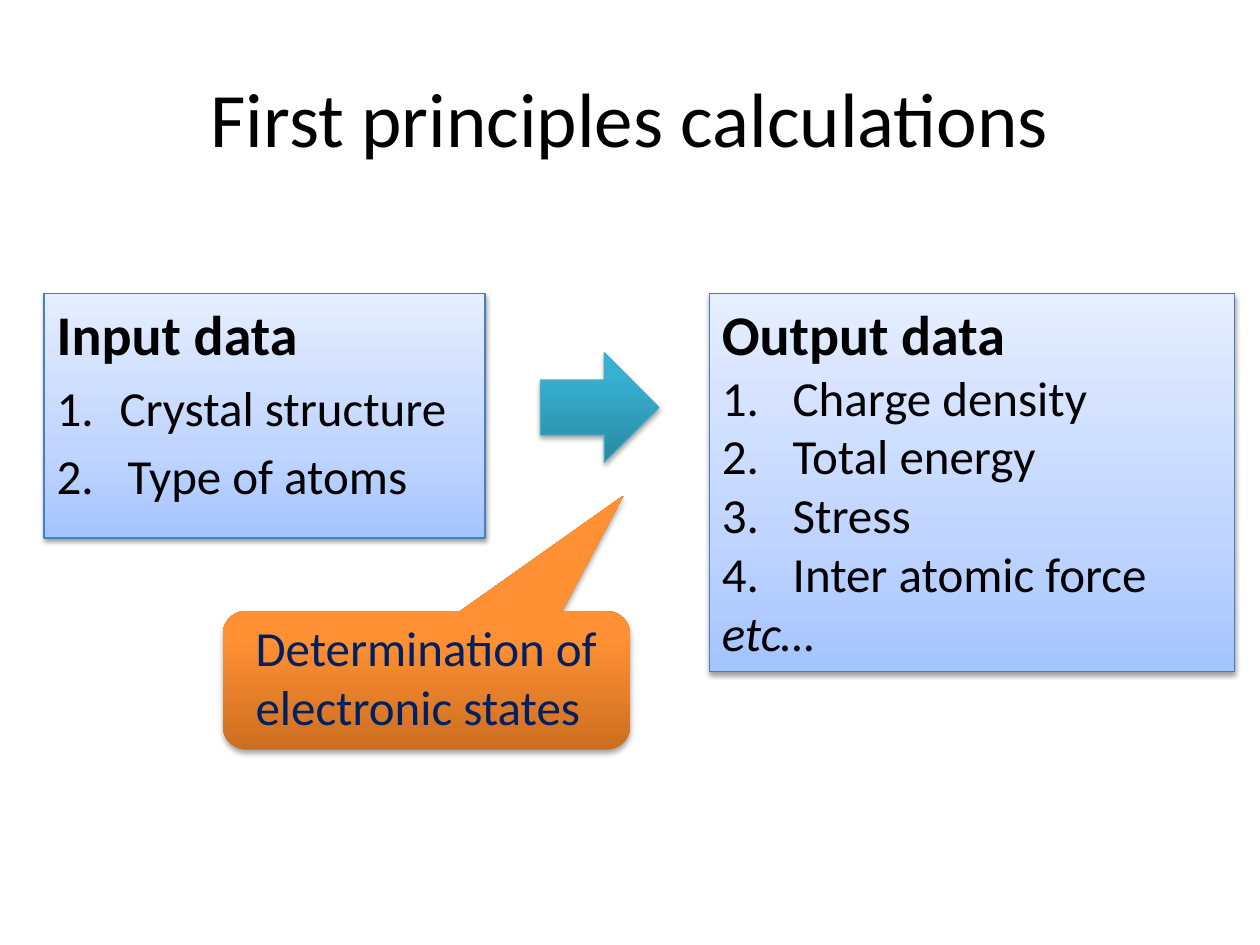
import dataclasses

import lxml.etree
import pptx
import pptx.dml.color
import pptx.enum.shapes
import pptx.enum.text
import pptx.oxml.ns
import pptx.util

Pt = pptx.util.Pt
qn = pptx.oxml.ns.qn
Shape = pptx.enum.shapes.MSO_SHAPE
AutoSize = pptx.enum.text.MSO_AUTO_SIZE


@dataclasses.dataclass(frozen=True)
class Theme:
    font: str = "Calibri"
    title_size: int = 44
    heading_size: int = 32
    text_size: int = 28
    ink: str = "000000"
    navy: str = "002060"
    panel_line: str = "4B7EBC"
    arrow_line: str = "46AAC5"
    panel: tuple = ((0, "A4C4FF"), (35, "BFD4FF"), (100, "E6EEFF"))
    callout: tuple = ((0, "CC6E20"), (80, "FF9034"), (100, "FF9136"))
    arrow: tuple = ((0, "2A88A2"), (80, "37B1D2"), (100, "34B4D6"))
    panel_shadow: tuple = (38, 1.6)
    solid_shadow: tuple = (35, 1.8)


THEME = Theme()


def rgb(color):
    return pptx.dml.color.RGBColor.from_string(color)


def add_node(parent, tag, **attributes):
    values = {name: str(value) for name, value in attributes.items()}
    return lxml.etree.SubElement(parent, qn(tag), values)


def place(shape, left, top, width, height):
    frame = {"left": left, "top": top, "width": width, "height": height}
    for name, value in frame.items():
        setattr(shape, name, Pt(value))


def style_gradient(shape, stops):
    shape.fill.gradient()
    shape.fill.gradient_angle = 90
    stop_list = shape._element.spPr.find(".//" + qn("a:gsLst"))
    stop_list.clear()
    for position, color in stops:
        stop = add_node(stop_list, "a:gs", pos=position * 1000)
        add_node(stop, "a:srgbClr", val=color)


def style_shadow(shape, opacity, distance):
    shape.shadow.inherit = False
    effects = shape._element.spPr.find(qn("a:effectLst"))
    shadow = add_node(effects, "a:outerShdw", blurRad=Pt(3.1), dist=Pt(distance),
                      dir=90 * 60000, rotWithShape=0)
    color = add_node(shadow, "a:srgbClr", val=THEME.ink)
    add_node(color, "a:alpha", val=opacity * 1000)


def style_surface(shape, stops, shadow, line=None):
    style_gradient(shape, stops)
    if line:
        shape.line.color.rgb = rgb(line)
        shape.line.width = Pt(0.75)
    else:
        shape.line.fill.background()
    style_shadow(shape, *shadow)


def write(para, text, size, color=THEME.ink, **formats):
    span = para.add_run()
    span.text = text
    span.font.color.rgb = rgb(color)
    formats = {"name": THEME.font, "size": Pt(size), **formats}
    for name, value in formats.items():
        setattr(span.font, name, value)


def set_marker(para, indent=0):
    properties = para._p.get_or_add_pPr()
    properties.set("marL", str(Pt(indent)))
    properties.set("indent", str(-Pt(indent)))
    if indent:
        add_node(properties, "a:buFont", typeface="+mj-lt")
        add_node(properties, "a:buAutoNum", type="arabicPeriod")
    else:
        add_node(properties, "a:buNone")


def fill_panel(box, heading, items):
    style_surface(box, THEME.panel, THEME.panel_shadow, THEME.panel_line)
    frame = box.text_frame
    frame.word_wrap = True
    para = frame.paragraphs[0]
    set_marker(para)
    write(para, heading, THEME.heading_size, bold=True)
    for text, indent in items:
        para = frame.add_paragraph()
        set_marker(para, indent)
        write(para, text, THEME.text_size)
    return frame


def add_title(page, text):
    title = page.shapes.title
    place(title, 36, 21.6, 648, 90)
    write(title.text_frame.paragraphs[0], text, THEME.title_size)


def add_input(page):
    body = page.placeholders[1]
    place(body, 25.2, 167.8, 252, 139.7)
    frame = fill_panel(body, "Input data",
                       [("Crystal structure", 36), ("Type of atoms", 40.5)])
    frame.auto_size = AutoSize.NONE


def add_callout(page, text):
    group = page.shapes.add_group_shape()
    bubble = group.shapes.add_shape(Shape.ROUNDED_RECTANGULAR_CALLOUT,
                                    Pt(127.4), Pt(349.2), Pt(232.6), Pt(79.2))
    for index, value in enumerate((0.484, -1.333, 0.167)):
        bubble.adjustments[index] = value
    style_surface(bubble, THEME.callout, THEME.solid_shadow)
    label = group.shapes.add_textbox(Pt(139), Pt(349.2), Pt(226.8), Pt(74.9))
    label.text_frame.word_wrap = True
    label.text_frame.auto_size = AutoSize.SHAPE_TO_FIT_TEXT
    write(label.text_frame.paragraphs[0], text, THEME.text_size, THEME.navy)


def add_output(page):
    box = page.shapes.add_textbox(Pt(405.4), Pt(167.8), Pt(300.2), Pt(216))
    results = ["Charge density", "Total energy", "Stress", "Inter atomic force"]
    items = [(result, 40.5) for result in results]
    frame = fill_panel(box, "Output data", items)
    frame.auto_size = AutoSize.SHAPE_TO_FIT_TEXT
    closing = frame.add_paragraph()
    write(closing, "etc…", THEME.text_size, italic=True)


def add_arrow(page):
    arrow = page.shapes.add_shape(Shape.RIGHT_ARROW,
                                  Pt(308.9), Pt(201.6), Pt(67.7), Pt(62.6))
    style_surface(arrow, THEME.arrow, THEME.solid_shadow, THEME.arrow_line)


def main():
    deck = pptx.Presentation()
    deck.slide_width, deck.slide_height = Pt(720), Pt(540)
    page = deck.slides.add_slide(deck.slide_layouts[1])
    add_title(page, "First principles calculations")
    add_input(page)
    add_callout(page, "Determination of electronic states")
    add_output(page)
    add_arrow(page)
    deck.save("out.pptx")


if __name__ == "__main__":
    main()
